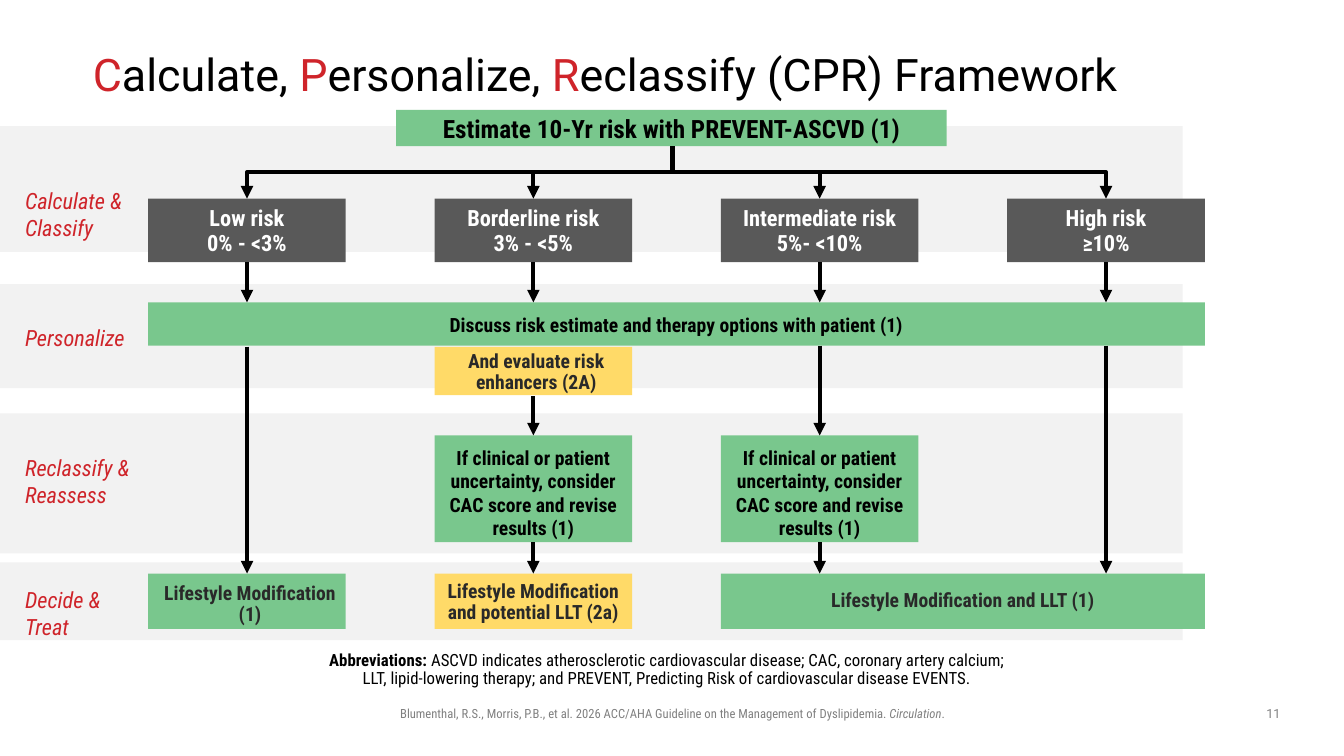
"""Build the Calculate, Personalize, Reclassify framework slide."""
import pptx
import pptx.util
import pptx.dml.color
import pptx.enum.shapes
import pptx.enum.text
import pptx.oxml.ns
import lxml.etree

Inches = pptx.util.Inches
Align = pptx.enum.text.PP_ALIGN
Anchor = pptx.enum.text.MSO_ANCHOR
Connector = pptx.enum.shapes.MSO_CONNECTOR

COLORS = {"red": "CF242A", "black": "000000", "ink": "292929", "white": "FFFFFF",
          "grey": "808080", "band": "F2F2F2", "dark": "595959",
          "green": "79C78D", "yellow": "FFDA68"}
CONDENSED = "Roboto Condensed"

TITLE = [("C", "red"), ("alculate, ", "black"), ("P", "red"), ("ersonalize, ", "black"),
         ("R", "red"), ("eclassify (CPR) Framework", "black")]
BANDS = [(1.25, 1.25), (2.82, 1.03), (4.1, 1.39), (5.58, 0.77)]
STAGES = [(1.81, 0.64, ["Calculate &", "Classify"]), (3.17, 0.37, ["Personalize"]),
          (4.46, 0.64, ["Reclassify &", "Reassess"]), (5.77, 0.64, ["Decide &", "Treat"])]
RISKS = [("Low risk", "0% - <3%"), ("Borderline risk", "3% - <5%"),
         ("Intermediate risk", "5%- <10%"), ("High risk", "≥10%")]
CAC = "If clinical or patient uncertainty, consider CAC score and revise results (1)"
ABBREVIATIONS = [
    [("Abbreviations: ", {"bold": True}),
     ("ASCVD indicates atherosclerotic cardiovascular disease; CAC, coronary artery calcium;", {})],
    [("LLT, lipid-lowering therapy; and PREVENT, "
      "Predicting Risk of cardiovascular disease EVENTS.", {})]]
CITATION = [[("Blumenthal, R.S., Morris, P.B., et al. 2026 ACC/AHA Guideline on the "
              "Management of Dyslipidemia. ", {}), ("Circulation", {"italic": True}), (".", {})]]

COLUMN_LEFT, COLUMN_PITCH, COLUMN_WIDTH = 1.47, 2.84, 1.96
LEFTS = [COLUMN_LEFT + COLUMN_PITCH * i for i in range(len(RISKS))]
CENTERS = [left + COLUMN_WIDTH / 2 for left in LEFTS]
FULL_WIDTH = LEFTS[3] + COLUMN_WIDTH - LEFTS[0]
LAST_TWO = LEFTS[3] + COLUMN_WIDTH - LEFTS[2]
START_X, START_Y, RISK_TOP, RISK_BOTTOM = 6.67, 1.45, 1.97, 2.6
DISCUSS_TOP, DISCUSS_BOTTOM, CAC_TOP, CAC_BOTTOM, TREAT_TOP = 3, 3.43, 4.32, 5.38, 5.69

TOP_INSET = (0, 0.1, 0, 0)
MIDDLE_INSET = (0, 0.03, 0, 0)
BOXES = [
    (LEFTS[0], DISCUSS_TOP, FULL_WIDTH, 0.43, "green", "black", TOP_INSET, Anchor.TOP, 1, 0,
     "Discuss risk estimate and therapy options with patient (1)"),
    (LEFTS[1], 3.44, COLUMN_WIDTH, 0.48, "yellow", "ink", MIDDLE_INSET, Anchor.MIDDLE, 0.9, 0.06,
     "And evaluate risk enhancers (2A)"),
    (LEFTS[1], CAC_TOP, COLUMN_WIDTH, 1.06, "green", "black", TOP_INSET, Anchor.TOP, 1, 0, CAC),
    (LEFTS[2], CAC_TOP, COLUMN_WIDTH, 1.06, "green", "black", TOP_INSET, Anchor.TOP, 1, 0, CAC),
    (LEFTS[0], TREAT_TOP, COLUMN_WIDTH, 0.55, "green", "ink", TOP_INSET, Anchor.TOP, 0.9, 0.06,
     "Lifestyle Modification (1)"),
    (LEFTS[1], TREAT_TOP, COLUMN_WIDTH, 0.55, "yellow", "ink", MIDDLE_INSET, Anchor.MIDDLE, 0.9, 0,
     "Lifestyle Modification and potential LLT (2a)"),
    (LEFTS[2], TREAT_TOP, LAST_TWO, 0.55, "green", "ink", (0, 0, 0, 0), Anchor.MIDDLE, 0.9, 0,
     "Lifestyle Modification and LLT (1)")]
ARROWS = [(column, RISK_BOTTOM, DISCUSS_TOP) for column in range(len(RISKS))] + [
    (0, 3.44, TREAT_TOP), (1, 3.93, CAC_TOP), (2, DISCUSS_BOTTOM, CAC_TOP),
    (3, DISCUSS_BOTTOM, TREAT_TOP), (1, CAC_BOTTOM, TREAT_TOP), (2, CAC_BOTTOM, TREAT_TOP)]


def rgb(name):
    return pptx.dml.color.RGBColor.from_string(COLORS[name])


def add_span(para, text, size, color, font=CONDENSED, bold=False, italic=False):
    span = para.add_run()
    span.text = text
    span.font.size = pptx.util.Pt(size)
    span.font.name = font
    span.font.bold = bold
    span.font.italic = italic
    span.font.color.rgb = rgb(color)


def set_frame(frame, insets, anchor):
    frame.word_wrap = True
    frame.auto_size = pptx.enum.text.MSO_AUTO_SIZE.NONE
    frame.vertical_anchor = anchor
    frame.margin_left, frame.margin_top, frame.margin_right, frame.margin_bottom = map(Inches, insets)


def add_rect(page, left, top, width, height, fill):
    box = page.shapes.add_shape(pptx.enum.shapes.MSO_SHAPE.RECTANGLE,
                                *map(Inches, (left, top, width, height)))
    box.shadow.inherit = False
    box.fill.solid()
    box.fill.fore_color.rgb = rgb(fill)
    box.line.fill.background()
    return box


def add_box(page, left, top, width, height, fill, color, insets, anchor, spacing, indent,
            *lines, size=14):
    box = add_rect(page, left, top, width, height, fill)
    set_frame(box.text_frame, insets, anchor)
    para = box.text_frame.paragraphs[0]
    if indent:
        para._p.get_or_add_pPr().set("marL", str(Inches(indent)))
    para.alignment = Align.CENTER
    para.line_spacing = spacing
    for number, line in enumerate(lines):
        if number:
            para.add_line_break()
        add_span(para, line, size, color, bold=True)


def add_text(page, place, paragraphs, size, color, align=Align.CENTER, anchor=Anchor.TOP,
             spacing=1, font=CONDENSED, insets=(0.1, 0.05, 0.1, 0.05)):
    box = page.shapes.add_textbox(*map(Inches, place))
    frame = box.text_frame
    set_frame(frame, insets, anchor)
    for number, spans in enumerate(paragraphs):
        para = frame.add_paragraph() if number else frame.paragraphs[0]
        para.alignment = align
        para.line_spacing = spacing
        for text, style in spans:
            add_span(para, text, size, color, font, **style)


def add_arrow(page, kind, *ends):
    arrow = page.shapes.add_connector(kind, *map(Inches, ends))
    arrow.line.color.rgb = rgb("black")
    arrow.line.width = pptx.util.Pt(3)
    qn = pptx.oxml.ns.qn
    lxml.etree.SubElement(arrow.line._get_or_add_ln(), qn("a:tailEnd"), type="triangle")
    lxml.etree.SubElement(arrow._element.spPr, qn("a:effectLst"))
    return arrow


def add_branch(page, target):
    """Draw an elbow that leaves downward, turned a quarter to reach the target."""
    drop, reach = RISK_TOP - START_Y, abs(target - START_X)
    left = (START_X + target - drop) / 2
    top = (START_Y + RISK_TOP - reach) / 2
    sides = (left, left + drop)
    goes_right = target > START_X
    begin, end = reversed(sides) if goes_right else sides
    branch = add_arrow(page, Connector.ELBOW, begin, top, end, top + reach)
    branch.rotation = 270 if goes_right else 90


def main():
    deck = pptx.Presentation()
    deck.slide_width, deck.slide_height = Inches(13.33), Inches(7.5)
    page = deck.slides.add_slide(deck.slide_layouts[5])
    title = page.shapes.title
    title.left, title.top, title.width, title.height = map(Inches, (0.92, 0.4, 11.5, 0.72))
    set_frame(title.text_frame, (0, 0, 0, 0), Anchor.MIDDLE)
    para = title.text_frame.paragraphs[0]
    para.alignment = Align.LEFT
    para.line_spacing = 0.9
    for text, color in TITLE:
        add_span(para, text, 32, color, "Roboto")

    for top, height in BANDS:
        add_rect(page, 0, top, 11.73, height, "band")
    add_box(page, 3.93, 1.09, 5.46, 0.36, "green", "black", (0.1, 0.05, 0.1, 0.05),
            Anchor.MIDDLE, 1, 0, "Estimate 10-Yr risk with PREVENT-ASCVD (1)", size=18)
    for left, lines in zip(LEFTS, RISKS):
        add_box(page, left, RISK_TOP, COLUMN_WIDTH, RISK_BOTTOM - RISK_TOP, "dark", "white",
                MIDDLE_INSET, Anchor.MIDDLE, 0.9, 0, *lines, size=16)
    for box in BOXES:
        add_box(page, *box)
    for center in CENTERS:
        add_branch(page, center)
    for column, top, bottom in ARROWS:
        add_arrow(page, Connector.STRAIGHT, CENTERS[column], top, CENTERS[column], bottom)
    for top, height, lines in STAGES:
        add_text(page, (0.15, top, 1.41, height), [[(line, {"italic": True})] for line in lines],
                 16, "red", Align.LEFT)
    add_text(page, (1.88, 6.42, 9.57, 0.46), ABBREVIATIONS, 12, "black", anchor=Anchor.BOTTOM,
             spacing=0.9, insets=(0, 0.05, 0.1, 0.05))
    add_text(page, (2.36, 6.95, 8.62, 0.25), CITATION, 9, "grey")
    add_text(page, (12.42, 6.95, 0.42, 0.26), [[("11", {})]], 9, "grey", font="Roboto")
    deck.save("out.pptx")


if __name__ == "__main__":
    main()
